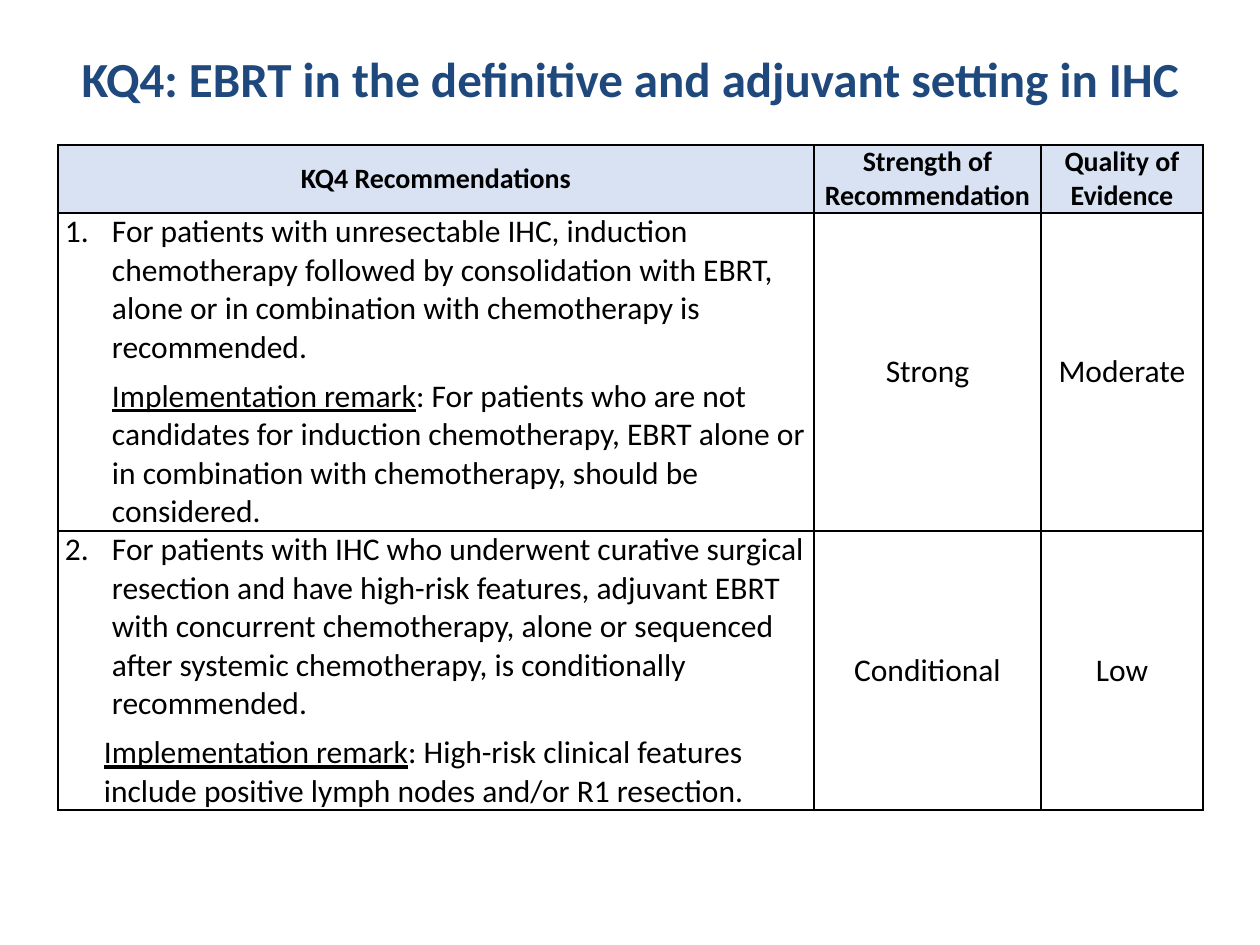
from lxml.etree import SubElement
from pptx import Presentation
from pptx.dml.color import RGBColor
from pptx.enum.text import MSO_ANCHOR, PP_ALIGN
from pptx.oxml.ns import qn
from pptx.util import Pt

EMU_PER_PX = 914400 / 126
FONT = "Calibri"
NAVY = RGBColor(0x1F, 0x49, 0x7D)
BLACK = RGBColor(0, 0, 0)
PALE_BLUE = RGBColor(0xD9, 0xE2, 0xF3)
COLUMN_WIDTHS = (756, 227, 162)
ROW_HEIGHTS = (68, 318, 279)
CELL_MARGIN = 7
NUMBER_INDENT = 47
HEADERS = (
    "KQ4 Recommendations",
    "Strength of\nRecommendation",
    "Quality of\nEvidence",
)
RECOMMENDATIONS = (
    (
        "For patients with unresectable IHC, induction chemotherapy followed by "
        "consolidation with EBRT, alone or in combination with chemotherapy is recommended.",
        ": For patients who are not candidates for induction chemotherapy, EBRT alone "
        "or in combination with chemotherapy, should be considered.",
        47, "Strong", "Moderate",
    ),
    (
        "For patients with IHC who underwent curative surgical resection and have "
        "high-risk features, adjuvant EBRT with concurrent chemotherapy, alone or "
        "sequenced after systemic chemotherapy, is conditionally recommended.",
        ": High-risk clinical features include positive lymph nodes and/or R1 resection.",
        39, "Conditional", "Low",
    ),
)


def px(length):
    """Turn whole pixels into EMU."""
    return round(length * EMU_PER_PX)


def style_font(font, size, color=BLACK, bold=False):
    """Set typeface, size, colour and weight."""
    font.name = FONT
    font.size = Pt(size)
    font.color.rgb = color
    font.bold = bold


def add_title(slide, text):
    """Add the centred heading."""
    box = slide.shapes.add_textbox(px(58), px(39), px(1144), px(78))
    frame = box.text_frame
    frame.word_wrap = True
    frame.vertical_anchor = MSO_ANCHOR.MIDDLE
    frame.text = text
    para = frame.paragraphs[0]
    para.alignment = PP_ALIGN.CENTER
    style_font(para.runs[0].font, 28, NAVY, True)


def format_cell(cell, fill_color=None):
    """Set the margins, borders and fill of a cell."""
    cell.margin_left = cell.margin_right = px(CELL_MARGIN)
    cell.margin_top = cell.margin_bottom = 0
    properties = cell._tc.get_or_add_tcPr()
    for side in ("a:lnL", "a:lnR", "a:lnT", "a:lnB"):
        line = SubElement(properties, qn(side), w=str(Pt(1)))
        fill = SubElement(line, qn("a:solidFill"))
        SubElement(fill, qn("a:srgbClr"), val=str(BLACK))
    if fill_color is None:
        cell.fill.background()
    else:
        cell.fill.solid()
        cell.fill.fore_color.rgb = fill_color


def fill_centred_cell(cell, text, size, bold=False, fill_color=None):
    """Write centred text into a cell."""
    format_cell(cell, fill_color)
    cell.vertical_anchor = MSO_ANCHOR.MIDDLE
    cell.text_frame.text = text
    for para in cell.text_frame.paragraphs:
        para.alignment = PP_ALIGN.CENTER
        style_font(para.runs[0].font, size, bold=bold)


def indent(para, margin, first_line=0):
    """Set the left margin and first-line indent of a paragraph."""
    properties = para._p.get_or_add_pPr()
    properties.set("marL", str(px(margin)))
    properties.set("indent", str(px(first_line)))
    return properties


def fill_recommendation_cell(cell, number, statement, remark, remark_indent):
    """Write a numbered statement and its implementation remark."""
    format_cell(cell)
    cell.vertical_anchor = MSO_ANCHOR.TOP
    frame = cell.text_frame
    frame.text = statement
    para = frame.paragraphs[0]
    para.space_after = Pt(6)
    properties = indent(para, NUMBER_INDENT, -NUMBER_INDENT)
    SubElement(properties, qn("a:buFont"), typeface="+mj-lt")
    SubElement(properties, qn("a:buAutoNum"), type="arabicPeriod", startAt=str(number))
    style_font(para.runs[0].font, 18)

    remark_para = frame.add_paragraph()
    indent(remark_para, remark_indent)
    for text, underlined in (("Implementation remark", True), (remark, False)):
        span = remark_para.add_run()
        span.text = text
        style_font(span.font, 18)
        span.font.underline = underlined


def add_recommendation_table(slide):
    """Add the table of recommendations."""
    frame = slide.shapes.add_table(
        len(ROW_HEIGHTS), len(COLUMN_WIDTHS), px(58), px(145),
        px(sum(COLUMN_WIDTHS)), px(sum(ROW_HEIGHTS)),
    )
    table = frame.table
    table.first_row = table.horz_banding = False
    for column, width in zip(table.columns, COLUMN_WIDTHS):
        column.width = px(width)
    for row, height in zip(table.rows, ROW_HEIGHTS):
        row.height = px(height)
    for index, header in enumerate(HEADERS):
        fill_centred_cell(table.cell(0, index), header, 16, True, PALE_BLUE)
    for number, recommendation in enumerate(RECOMMENDATIONS, 1):
        statement, remark, remark_indent, strength, quality = recommendation
        fill_recommendation_cell(
            table.cell(number, 0), number, statement, remark, remark_indent
        )
        fill_centred_cell(table.cell(number, 1), strength, 18)
        fill_centred_cell(table.cell(number, 2), quality, 18)


def main():
    """Build and save the slide."""
    deck = Presentation()
    deck.slide_width = px(1260)
    deck.slide_height = px(945)
    page = deck.slides.add_slide(deck.slide_layouts[6])
    add_title(page, "KQ4: EBRT in the definitive and adjuvant setting in IHC")
    add_recommendation_table(page)
    deck.save("out.pptx")


if __name__ == "__main__":
    main()
